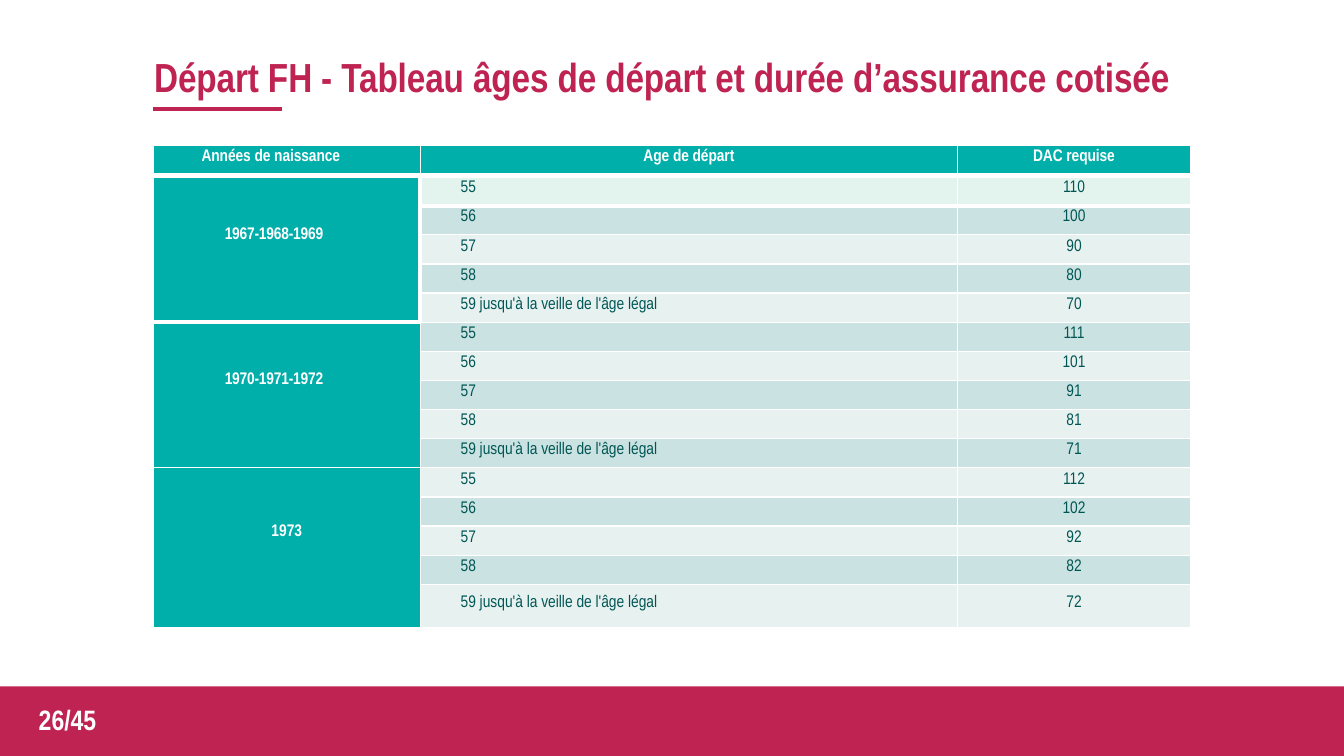
from dataclasses import dataclass

from lxml.etree import SubElement
from pptx import Presentation
from pptx.dml.color import RGBColor
from pptx.enum.shapes import MSO_CONNECTOR, MSO_SHAPE
from pptx.enum.text import MSO_ANCHOR, PP_ALIGN
from pptx.oxml.ns import qn
from pptx.util import Inches, Pt


@dataclass(frozen=True)
class Theme:
    font: str = "Arial Narrow"
    crimson: str = "BE2352"
    teal: str = "00AEAA"
    ink: str = "005654"
    white: str = "FFFFFF"
    first_band: str = "E2F4ED"
    bands: tuple = ("E7F1F0", "CAE2E1")
    title_size: float = 29
    number_size: float = 20
    table_size: float = 12
    thin: float = 1
    thick: float = 3
    header_rule: float = 4.5


class SlideBuilder:
    """Places elements on a grid of 133.33 columns by 75 rows."""
    columns, rows = 133.33, 75

    def __init__(self, deck, theme):
        self.deck, self.theme = deck, theme
        self.page = deck.slides.add_slide(deck.slide_layouts[6])

    def across(self, columns):
        return round(self.deck.slide_width * columns / self.columns)

    def down(self, rows):
        return round(self.deck.slide_height * rows / self.rows)

    def place(self, left, top, width, height):
        return self.across(left), self.down(top), self.across(width), self.down(height)

    def set_text(self, frame, text, size, color, bold=True, align=PP_ALIGN.LEFT, spacing=0):
        para = frame.paragraphs[0]
        para.alignment = align
        font = para.font
        font.name, font.size, font.bold = self.theme.font, Pt(size), bold
        font.color.rgb = RGBColor.from_string(color)
        if text:
            span = para.add_run()
            span.text = text
            if spacing:
                span.font._element.set("spc", str(spacing))

    def band(self, area, color):
        shape = self.page.shapes.add_shape(MSO_SHAPE.RECTANGLE, *self.place(*area))
        shape.shadow.inherit = False
        shape.fill.solid()
        shape.fill.fore_color.rgb = RGBColor.from_string(color)
        shape.line.fill.background()

    def text(self, area, text, size, color, margins=None, anchor=MSO_ANCHOR.TOP, **style):
        box = self.page.shapes.add_textbox(*self.place(*area))
        frame = box.text_frame
        frame.word_wrap = True
        frame.vertical_anchor = anchor
        if margins:
            self.set_margins(frame, *margins)
        self.set_text(frame, text, size, color, **style)

    def rule(self, left, right, top, color, weight):
        line = self.page.shapes.add_connector(
            MSO_CONNECTOR.STRAIGHT, self.across(left), self.down(top),
            self.across(right), self.down(top))
        line.line.color.rgb = RGBColor.from_string(color)
        line.line.width = Pt(weight)
        SubElement(line._element.spPr, qn("a:effectLst"))

    def set_margins(self, target, left=0, top=0):
        target.margin_left, target.margin_top = self.across(left), self.down(top)
        target.margin_right = target.margin_bottom = 0

    def table(self, left, top, widths, heights):
        area = self.place(left, top, sum(widths), sum(heights))
        table = self.page.shapes.add_table(len(heights), len(widths), *area).table
        table.first_row = table.horz_banding = False
        for column, width in zip(table.columns, widths):
            column.width = self.across(width)
        for row, height in zip(table.rows, heights):
            row.height = self.down(height)
        return table

    def cell(self, cell, text, fill, color, left=0, top=0, borders=None, **style):
        self.set_margins(cell, left, top)
        self.set_text(cell.text_frame, text, self.theme.table_size, color, **style)
        properties = cell._tc.get_or_add_tcPr()
        for side in "LRTB":
            weight = (borders or {}).get(side, self.theme.thin)
            line = SubElement(properties, qn(f"a:ln{side}"), w=str(Pt(weight)))
            solid = SubElement(line, qn("a:solidFill"))
            SubElement(solid, qn("a:srgbClr"), val=self.theme.white)
        cell.fill.solid()
        cell.fill.fore_color.rgb = RGBColor.from_string(fill)


HEADINGS = [("Années de naissance", PP_ALIGN.LEFT, 4.8),
            ("Age de départ", PP_ALIGN.CENTER, 0),
            ("DAC requise", PP_ALIGN.CENTER, 0)]
AGES = ["55", "56", "57", "58", "59 jusqu'à la veille de l'âge légal"]
# Birth years, alignment, left and top margins, first required duration
GENERATIONS = [("1967-1968-1969", PP_ALIGN.LEFT, 7.1, 5.1, 110),
               ("1970-1971-1972", PP_ALIGN.LEFT, 7.1, 5, 111),
               ("1973", PP_ALIGN.CENTER, 0, 5.6, 112)]
DURATION_STEP = 10


def fill_table(slide):
    theme = slide.theme
    last_row = len(AGES) * len(GENERATIONS)
    heights = [3, 3] + [2.89] * (last_row - 2) + [4.3]
    table = slide.table(15.2, 14.4, [26.5, 53.3, 23.1], heights)

    # Header row
    for column, (heading, align, left) in enumerate(HEADINGS):
        slide.cell(table.cell(0, column), heading, theme.teal, theme.white, left, 0.4,
                   {"B": theme.header_rule}, align=align, spacing=-5)

    for group, (years, align, left, top, longest) in enumerate(GENERATIONS):
        first = 1 + group * len(AGES)
        # Birth years, merged over all ages
        edges = [{"T": theme.header_rule, "R": theme.thick, "B": theme.thick},
                 {"T": theme.thick}, {}][group]
        for row in range(first, first + len(AGES)):
            slide.cell(table.cell(row, 0), years if row == first else "", theme.teal,
                       theme.white, left, top if row == first else 0, edges,
                       align=align, spacing=-15 if group < 2 else 0)
        table.cell(first, 0).merge(table.cell(first + len(AGES) - 1, 0))

        # Ages and required durations
        for step, age in enumerate(AGES):
            row = first + step
            fill = theme.first_band if row == 1 else theme.bands[(row + 1) % 2]
            margin = {1: 0.5, last_row: 1.1}.get(row, 0.4)
            borders = {1: {"T": theme.header_rule, "B": theme.thick},
                       2: {"T": theme.thick}}.get(row, {})
            age_borders = {**borders, "L": theme.thick} if group == 0 else borders
            slide.cell(table.cell(row, 1), age, fill, theme.ink, 4, margin,
                       age_borders, bold=False)
            slide.cell(table.cell(row, 2), str(longest - DURATION_STEP * step), fill,
                       theme.ink, 0, margin, borders, bold=False, align=PP_ALIGN.CENTER)


def main():
    deck = Presentation()
    deck.slide_width, deck.slide_height = Inches(13.33), Inches(7.5)
    theme = Theme()
    slide = SlideBuilder(deck, theme)

    # Footer band
    slide.band((0, 68.1, 133.33, 6.9), theme.crimson)

    # Title
    slide.text((15.2, 5, 102.6, 5), "Départ FH - Tableau âges de départ et durée d’assurance cotisée",
               theme.title_size, theme.crimson, margins=(0.1, 0.1),
               anchor=MSO_ANCHOR.MIDDLE, spacing=-10)

    # Table
    fill_table(slide)

    # Page number and title underline
    slide.text((1.7, 69.2, 10, 4.4), "26/45", theme.number_size, theme.white,
               align=PP_ALIGN.CENTER)
    slide.rule(15.2, 28, 10.8, theme.crimson, theme.thick)

    deck.save("out.pptx")


if __name__ == "__main__":
    main()
